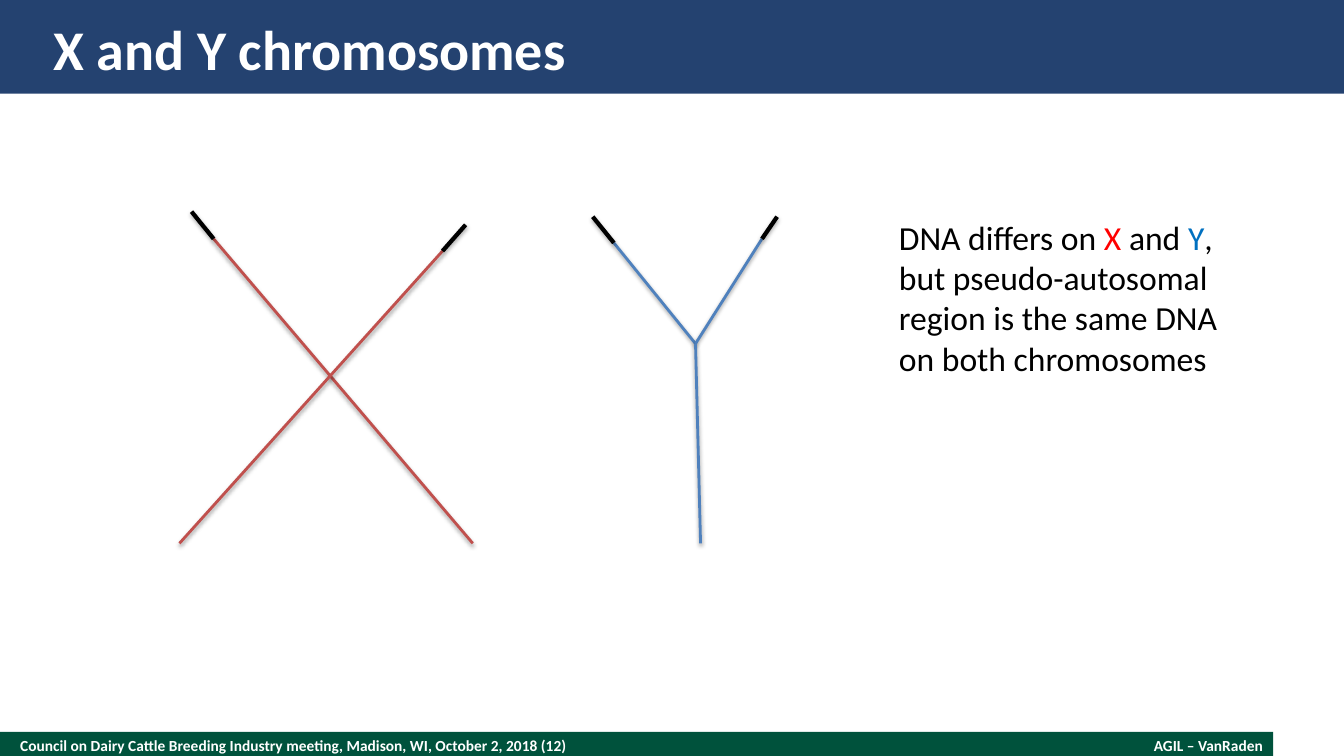
import pptx
import pptx.util
import pptx.dml.color
import pptx.enum.shapes
import pptx.enum.text
import pptx.oxml
import pptx.oxml.ns

Pt = pptx.util.Pt
ALIGN = pptx.enum.text.PP_ALIGN
ANCHOR = pptx.enum.text.MSO_ANCHOR

WHITE, BLACK = "FFFFFF", "000000"
NAVY, GREEN = "244270", "00523C"
X_LINE, Y_LINE = "C0504D", "4F81BD"
X_WORD, Y_WORD = "FF0000", "0070C0"

# Chromosome arms: (outer tip, start of the sex-specific part, far end)
X_ARMS = [
    ((136.8, 151.2), (152.6, 170.6), (337.7, 388.1)),
    ((332.6, 160.6), (316.1, 179.3), (128.2, 388.1)),
]
Y_FORK, Y_FOOT = (496.8, 245.5), (500.4, 388.1)
Y_ARMS = [
    ((423.4, 154.8), (438.5, 173.5), Y_FORK),
    ((555.1, 154.8), (544.3, 170.6), Y_FORK),
]


def color(hex_value):
    return pptx.dml.color.RGBColor.from_string(hex_value)


def add_bar(slide, width, top, height, fill):
    bar = slide.shapes.add_shape(
        pptx.enum.shapes.MSO_SHAPE.RECTANGLE, 0, Pt(top), Pt(width), Pt(height))
    bar.shadow.inherit = False
    bar.fill.solid()
    bar.fill.fore_color.rgb = color(fill)
    bar.line.fill.background()


def add_text(slide, box, lines, size, frame_format, bold=False, align=ALIGN.LEFT):
    """Write lines, each a list of (words, colour) pairs, one paragraph per line."""
    frame = slide.shapes.add_textbox(*map(Pt, box)).text_frame
    for name, value in frame_format.items():
        setattr(frame, name, value)
    for index, line in enumerate(lines):
        paragraph = frame.paragraphs[0] if index == 0 else frame.add_paragraph()
        paragraph.alignment = align
        for words, hex_value in line:
            run = paragraph.add_run()
            run.text = words
            font_format = {"name": "Calibri", "size": Pt(size), "bold": bold}
            for name, value in font_format.items():
                setattr(run.font, name, value)
            run.font.color.rgb = color(hex_value)


def add_strand(slide, start, end, hex_value, width, shadow_distance, shadow_percent):
    strand = slide.shapes.add_connector(
        pptx.enum.shapes.MSO_CONNECTOR.STRAIGHT, *map(Pt, start + end))
    strand.line.color.rgb = color(hex_value)
    strand.line.width = Pt(width)
    strand._element.spPr.append(pptx.oxml.parse_xml(
        f'<a:effectLst {pptx.oxml.ns.nsdecls("a")}>'
        f'<a:outerShdw blurRad="{Pt(3.1)}" dist="{Pt(shadow_distance)}" '
        'dir="5400000" rotWithShape="0">'
        f'<a:srgbClr val="{BLACK}"><a:alpha val="{shadow_percent * 1000}"/></a:srgbClr>'
        '</a:outerShdw></a:effectLst>'))


def add_specific_part(slide, start, end, hex_value):
    add_strand(slide, start, end, hex_value, 2, 1.6, 38)


def add_pseudo_autosomal_tip(slide, start, end):
    add_strand(slide, start, end, BLACK, 3, 1.8, 35)


def add_chromosomes(slide):
    for arms, hex_value in ((X_ARMS, X_LINE), (Y_ARMS, Y_LINE)):
        for _, joint, end in arms:
            add_specific_part(slide, joint, end, hex_value)
    add_specific_part(slide, Y_FORK, Y_FOOT, Y_LINE)
    for tip, joint, _ in X_ARMS + Y_ARMS:
        add_pseudo_autosomal_tip(slide, tip, joint)


def main():
    deck = pptx.Presentation()
    deck.slide_width, deck.slide_height = Pt(960), Pt(540)
    slide = deck.slides.add_slide(deck.slide_layouts[6])

    add_bar(slide, 909.4, 522.7, 19.4, GREEN)
    add_bar(slide, 960, 0, 67, NAVY)

    banner = {"word_wrap": True, "vertical_anchor": ANCHOR.MIDDLE,
              "margin_left": 0, "margin_right": 0, "margin_top": 0, "margin_bottom": 0}
    meeting = "Council on Dairy Cattle Breeding Industry meeting, Madison, WI, October 2, 2018 (12)"
    add_text(slide, (14.4, 522.7, 624, 19.4), [[(meeting, WHITE)]], 11, banner, bold=True)
    add_text(slide, (691.2, 525.6, 211, 13.5), [[("AGIL – VanRaden", WHITE)]], 11, banner,
             bold=True, align=ALIGN.RIGHT)
    add_text(slide, (38.2, 9.4, 883.4, 50.4), [[("X and Y chromosomes", WHITE)]], 40, banner,
             bold=True)

    add_chromosomes(slide)

    explanation = [
        [("DNA differs on ", BLACK), ("X", X_WORD), (" and ", BLACK), ("Y", Y_WORD), (",", BLACK)],
        [("but pseudo-autosomal", BLACK)],
        [("region is the same DNA", BLACK)],
        [("on both chromosomes", BLACK)],
    ]
    add_text(slide, (635, 151.2, 244.1, 123.8), explanation, 24, {"word_wrap": False})

    deck.save("out.pptx")


if __name__ == "__main__":
    main()
